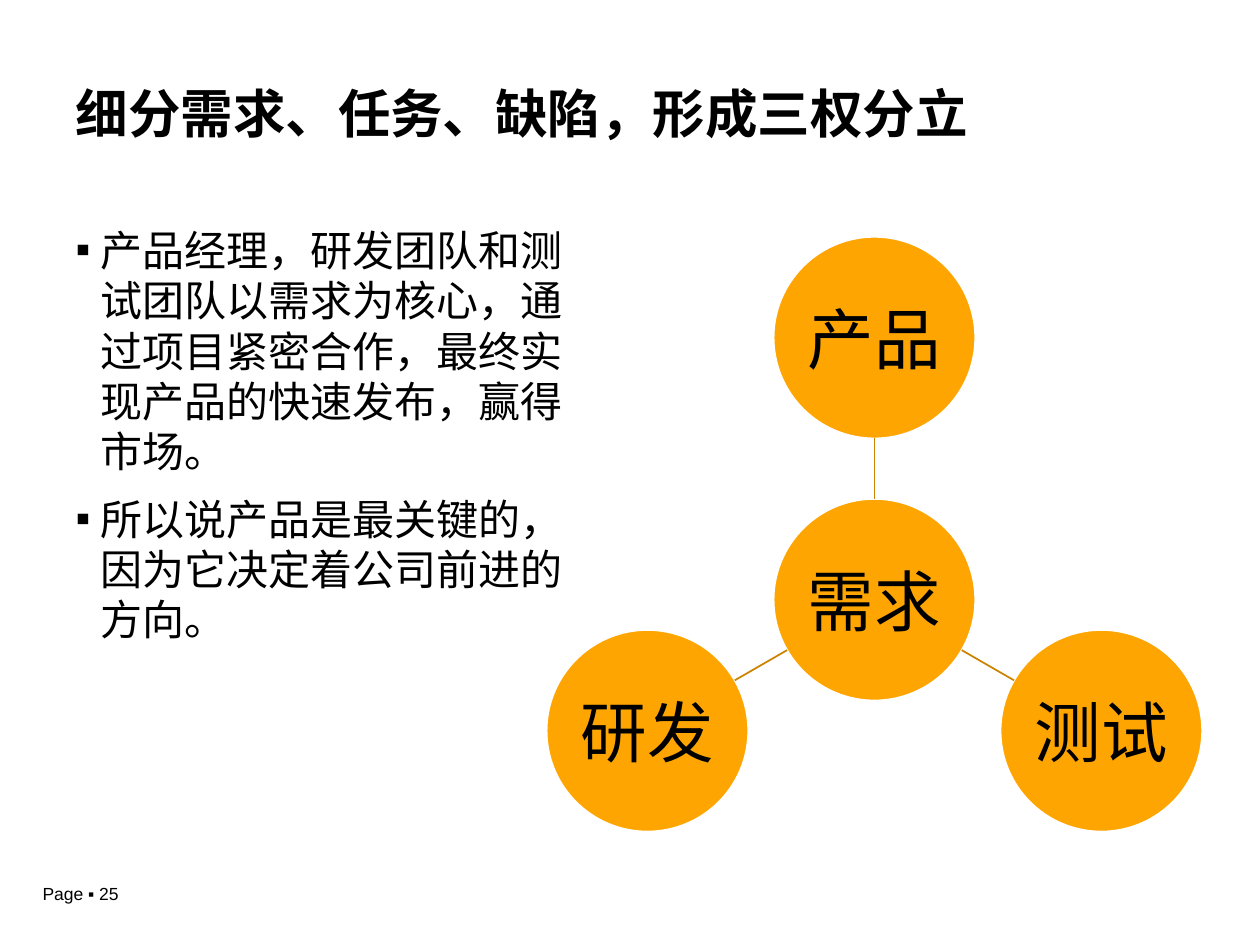
from math import cos, radians, sin

from lxml.etree import SubElement
from pptx import Presentation
from pptx.dml.color import RGBColor
from pptx.enum.shapes import MSO_CONNECTOR, MSO_SHAPE
from pptx.enum.text import MSO_ANCHOR, MSO_AUTO_SIZE, PP_ALIGN
from pptx.oxml.ns import qn
from pptx.util import Inches, Pt

COLORS = {"text": "000000", "circle": "FEA501", "outline": "FFFFFF", "spoke": "CB8401"}
FONT = "Arial"


def color(name):
    return RGBColor.from_string(COLORS[name])


def style_paragraph(paragraph, size, alignment=PP_ALIGN.LEFT, bold=False):
    paragraph.alignment = alignment
    paragraph.font.name = FONT
    paragraph.font.size = Pt(size)
    paragraph.font.bold = bold
    paragraph.font.color.rgb = color("text")


presentation = Presentation()
presentation.slide_width, presentation.slide_height = Inches(10), Inches(7.5)
slide = presentation.slides.add_slide(presentation.slide_layouts[1])

# Title
title = slide.shapes.title
title.left, title.top, title.width, title.height = map(Inches, (0.5, 0.3, 9, 1.25))
title.text_frame.text = "细分需求、任务、缺陷，形成三权分立"
title.text_frame.vertical_anchor = MSO_ANCHOR.MIDDLE
title.text_frame.auto_size = MSO_AUTO_SIZE.NONE
title.text_frame.paragraphs[0].line_spacing = 0.9
style_paragraph(title.text_frame.paragraphs[0], 30, bold=True)

# Bulleted list
body = slide.placeholders[1]
body.left, body.top, body.width, body.height = map(Inches, (0.5, 1.73, 4.17, 4.95))
body.text_frame.text = (
    "产品经理，研发团队和测试团队以需求为核心，通过项目紧密合作，最终实现产品的快速发布，赢得市场。\n"
    "所以说产品是最关键的，因为它决定着公司前进的方向。"
)
body.text_frame.auto_size = MSO_AUTO_SIZE.NONE
for paragraph in body.text_frame.paragraphs:
    paragraph.space_before = Pt(0)
    paragraph.space_after = Pt(9.6)
    properties = paragraph._p.get_or_add_pPr()
    properties.set("marL", str(Inches(0.2)))
    properties.set("indent", str(Inches(-0.2)))
    SubElement(properties, qn("a:buFont"), typeface=FONT)
    SubElement(properties, qn("a:buChar"), char="▪")
    style_paragraph(paragraph, 24)

# Radial diagram: a hub and three outer circles, 120 degrees apart
CENTER_X, CENTER_Y = 6.94, 4.76
RADIUS, ORBIT = 0.8, 2.08
OUTER_CIRCLES = {"产品": -90, "测试": 30, "研发": 150}


def point_at(angle, distance):
    """Slide position at an angle and distance from the hub's center."""
    return (CENTER_X + distance * cos(radians(angle)),
            CENTER_Y + distance * sin(radians(angle)))


circles = [("需求", (CENTER_X, CENTER_Y))]
circles += [(label, point_at(angle, ORBIT)) for label, angle in OUTER_CIRCLES.items()]
for label, (x, y) in circles:
    circle = slide.shapes.add_shape(
        MSO_SHAPE.OVAL, Inches(x - RADIUS), Inches(y - RADIUS),
        Inches(2 * RADIUS), Inches(2 * RADIUS))
    circle.shadow.inherit = False
    circle.fill.solid()
    circle.fill.fore_color.rgb = color("circle")
    circle.line.color.rgb = color("outline")
    circle.line.width = Pt(1)
    frame = circle.text_frame
    frame.text = label
    frame.word_wrap = False
    frame.vertical_anchor = MSO_ANCHOR.MIDDLE
    frame.margin_left = frame.margin_right = Inches(0.03)
    frame.margin_top = frame.margin_bottom = Inches(0.03)
    style_paragraph(frame.paragraphs[0], 38, PP_ALIGN.CENTER)

for angle in OUTER_CIRCLES.values():
    start, end = point_at(angle, RADIUS), point_at(angle, ORBIT - RADIUS)
    spoke = slide.shapes.add_connector(
        MSO_CONNECTOR.STRAIGHT, *map(Inches, start + end))
    spoke.line.color.rgb = color("spoke")
    spoke.line.width = Pt(1)
    SubElement(spoke._element.spPr, qn("a:effectLst"))

# Page number
page_number = slide.shapes.add_textbox(*map(Inches, (0.24, 6.96, 1.47, 0.27)))
page_number.text_frame.text = "Page ▪ 25"
page_number.text_frame.word_wrap = True
style_paragraph(page_number.text_frame.paragraphs[0], 10)

presentation.save("out.pptx")
